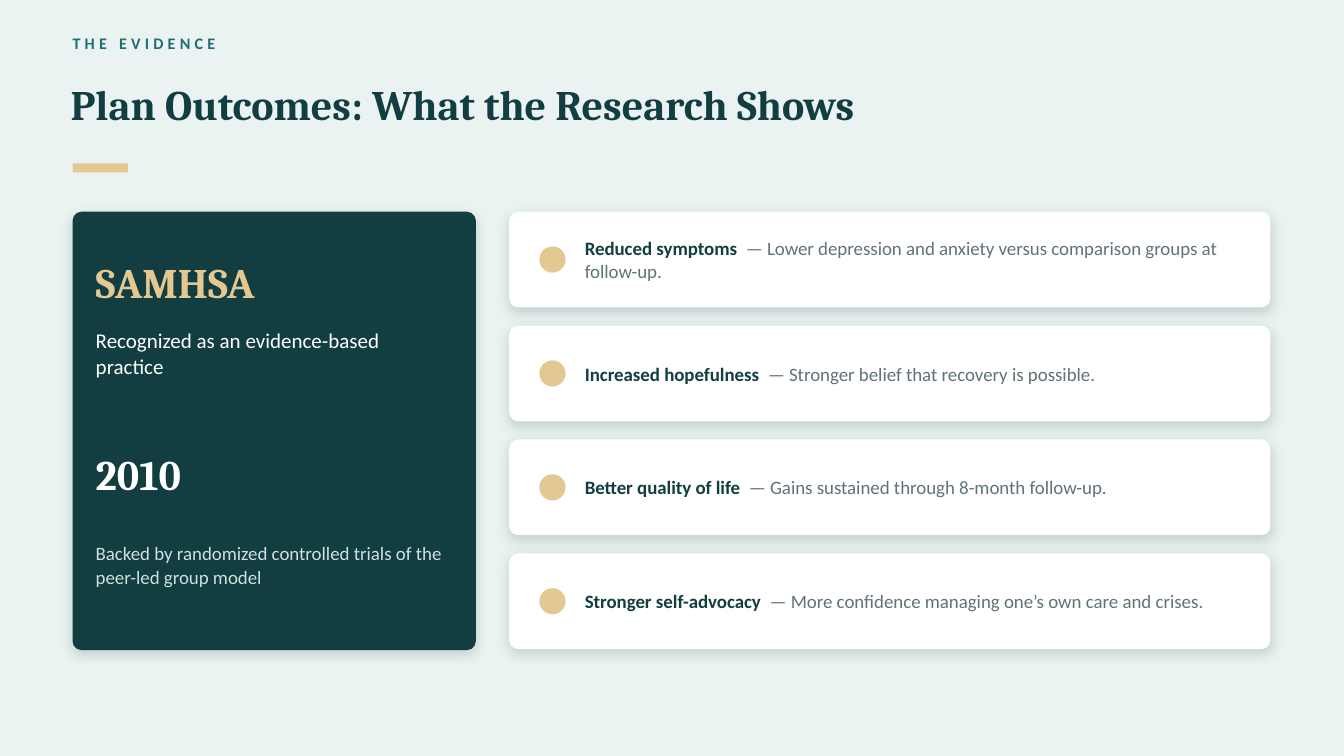
from pptx import Presentation
from pptx.dml.color import RGBColor as RGB
from pptx.enum.shapes import MSO_SHAPE as Shape
from pptx.enum.text import MSO_ANCHOR as Anchor, MSO_AUTO_SIZE as Fit, PP_ALIGN as Align
from pptx.oxml import parse_xml
from pptx.oxml.ns import nsdecls
from pptx.util import Inches, Pt

# Content
LABEL = "THE EVIDENCE"
TITLE = "Plan Outcomes: What the Research Shows"
FACTS = [  # text, style, top, height, line spacing
    ("SAMHSA", "gold", 2.5, 0.6, 1.0),
    ("Recognized as an evidence-based practice", "lead", 3.15, 0.7, 1.05),
    ("2010", "year", 4.35, 0.7, 1.0),
    ("Backed by randomized controlled trials of the peer-led group model", "note", 5.05, 1.1, 1.05),
]
GAINS = [
    ("Reduced symptoms", "Lower depression and anxiety versus comparison groups at follow-up."),
    ("Increased hopefulness", "Stronger belief that recovery is possible."),
    ("Better quality of life", "Gains sustained through 8-month follow-up."),
    ("Stronger self-advocacy", "More confidence managing one’s own care and crises."),
]

# Theme: colours and type styles (font, size, bold, colour)
HEAD, BODY = "Cambria", "Calibri"
THEME = {
    "fill": {"page": "EAF3F2", "dark": "123E42", "gold": "E4C892", "card": "FFFFFF", "shade": "1A3033"},
    "type": {
        "label": (BODY, 11.5, True, "1F6E73"),
        "title": (HEAD, 30, True, "123E42"),
        "gold": (HEAD, 30, True, "E4C892"),
        "year": (HEAD, 30, True, "FFFFFF"),
        "lead": (BODY, 15, False, "FFFFFF"),
        "note": (BODY, 13.5, False, "CFE0DF"),
        "gain": (BODY, 13.5, True, "123E42"),
        "proof": (BODY, 13.5, False, "5F7378"),
    },
}
FRAME = {
    "word_wrap": True, "auto_size": Fit.NONE, "vertical_anchor": Anchor.MIDDLE,
    "margin_left": 0, "margin_right": 0, "margin_top": 0, "margin_bottom": 0,
}

# Layout in inches
LEFT, TOP = 0.72, 2.1
PANEL_W, PANEL_H = 4, 4.35
CARD_X, CARD_W, CARD_H, GAP = 5.05, 7.55, 0.95, 0.18
DOT = 0.26
ROUND = 0.09  # corner radius


def tint(name):
    return RGB.from_string(THEME["fill"][name])


def write(frame, parts, space=1.0):
    """Fill a text frame with one paragraph of (text, style) parts."""
    for key, value in FRAME.items():
        setattr(frame, key, value)
    line = frame.paragraphs[0]
    line.alignment, line.line_spacing = Align.LEFT, space
    for text, style in parts:
        run = line.add_run()
        run.text = text
        face, size, bold, color = THEME["type"][style]
        for key, value in {"name": face, "size": Pt(size), "bold": bold}.items():
            setattr(run.font, key, value)
        run.font.color.rgb = RGB.from_string(color)
    return line


def add_text(slide, box, parts, space=1.0):
    area = slide.shapes.add_textbox(*map(Inches, box))
    return write(area.text_frame, parts, space)


def add_form(slide, kind, box, fill):
    form = slide.shapes.add_shape(kind, *map(Inches, box))
    form.fill.solid()
    form.fill.fore_color.rgb = tint(fill)
    form.line.fill.background()
    form.shadow.inherit = False
    return form


def add_card(slide, box, fill):
    """Round card with a soft shadow below."""
    card = add_form(slide, Shape.ROUNDED_RECTANGLE, box, fill)
    card.adjustments[0] = ROUND / min(box[2:])
    card._element.spPr.find("{*}effectLst").append(parse_xml(
        f'<a:outerShdw {nsdecls("a")} blurRad="{Pt(9)}" dist="{Pt(3)}" dir="5400000"'
        f' algn="t" rotWithShape="0"><a:srgbClr val="{THEME["fill"]["shade"]}">'
        '<a:alpha val="18000"/></a:srgbClr></a:outerShdw>'))


def main():
    deck = Presentation()
    deck.slide_width, deck.slide_height = Inches(13.33), Inches(7.5)
    slide = deck.slides.add_slide(deck.slide_layouts[5])
    slide.background.fill.solid()
    slide.background.fill.fore_color.rgb = tint("page")

    # Header
    label = add_text(slide, (LEFT, 0.28, 11, 0.3), [(LABEL, "label")])
    label.runs[0].font._element.set("spc", "300")
    title = slide.shapes.title
    for key, value in {"left": 0.7, "top": 0.55, "width": 12, "height": 0.95}.items():
        setattr(title, key, Inches(value))
    write(title.text_frame, [(TITLE, "title")])
    add_form(slide, Shape.RECTANGLE, (LEFT, 1.62, 0.55, 0.09), "gold")

    # Dark panel
    add_card(slide, (LEFT, TOP, PANEL_W, PANEL_H), "dark")
    for text, style, top, height, space in FACTS:
        add_text(slide, (0.95, top, 3.5, height), [(text, style)], space)

    # Outcome cards
    for row, (gain, proof) in enumerate(GAINS):
        top = TOP + row * (CARD_H + GAP)
        add_card(slide, (CARD_X, top, CARD_W, CARD_H), "card")
        add_form(slide, Shape.OVAL, (CARD_X + 0.3, top + (CARD_H - DOT) / 2, DOT, DOT), "gold")
        add_text(slide, (CARD_X + 0.75, top, 6.55, CARD_H),
                 [(f"{gain}  ", "gain"), (f"— {proof}", "proof")])

    deck.save("out.pptx")


if __name__ == "__main__":
    main()
